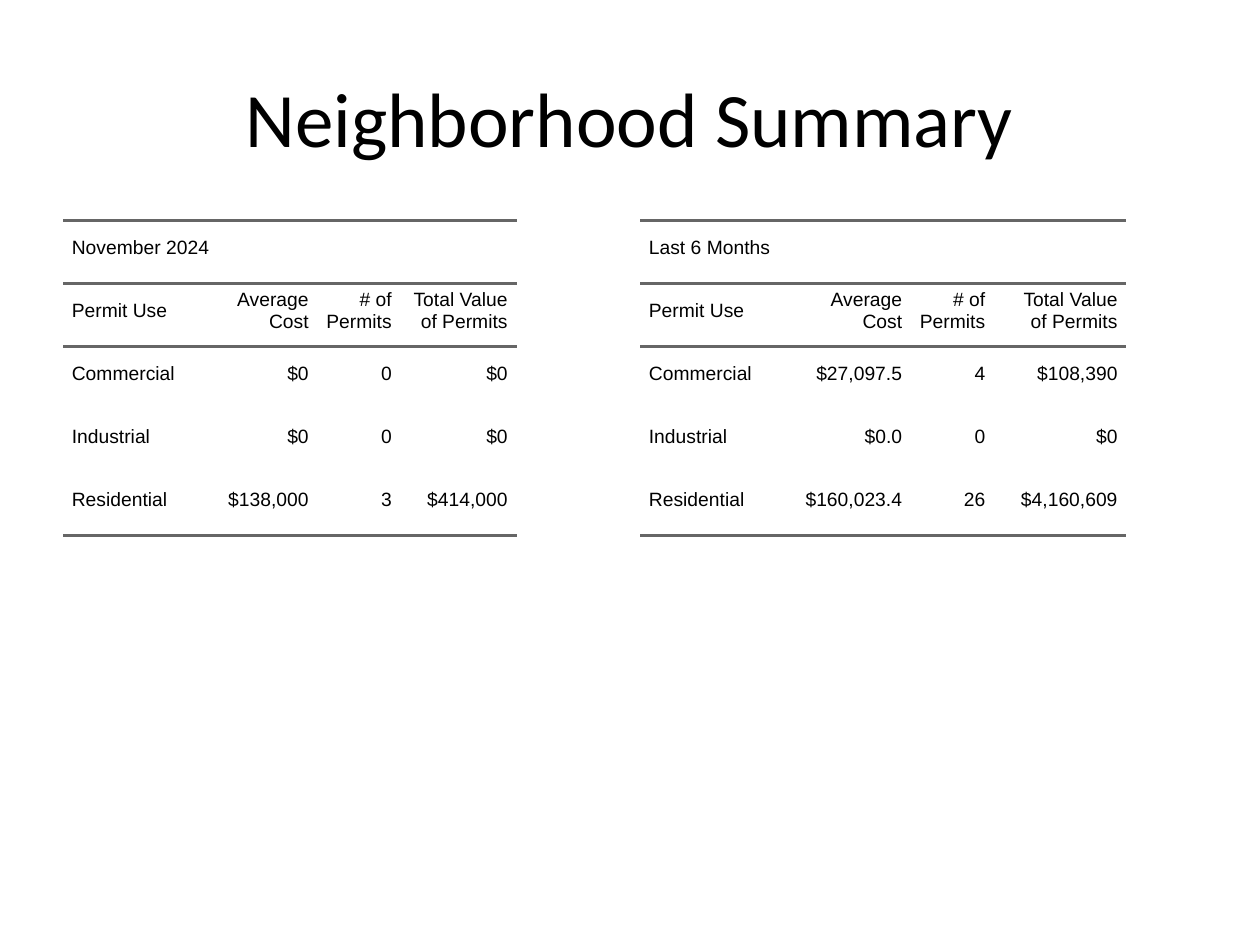
from lxml.etree import SubElement
from pptx import Presentation
from pptx.dml.color import RGBColor
from pptx.enum.text import MSO_ANCHOR, PP_ALIGN
from pptx.oxml.ns import qn
from pptx.util import Inches, Pt

PLAIN_TABLE_STYLE = "{2D5ABB26-0587-4C30-8999-92F81FD0307C}"
HEADINGS = ["Permit Use", "Average Cost", "# of Permits", "Total Value of Permits"]


def colour(value):
    return RGBColor.from_string(value)


class PermitSlide:
    text_colour = "000000"
    rule_colour = "666666"
    rule_width = Pt(1.5)
    row_height = Inches(0.5)
    padding = Inches(0.07)

    def __init__(self, page):
        self.page = page

    def style_paragraph(self, para, font, size, alignment):
        para.alignment = alignment
        para.font.name = font
        para.font.size = Pt(size)
        para.font.color.rgb = colour(self.text_colour)

    def title(self, text):
        box = self.page.shapes.add_textbox(Inches(0.5), Inches(0.3), Inches(9), Inches(1.25))
        frame = box.text_frame
        frame.word_wrap = True
        frame.vertical_anchor = MSO_ANCHOR.MIDDLE
        frame.text = text
        self.style_paragraph(frame.paragraphs[0], "Calibri", 44, PP_ALIGN.CENTER)

    def rule(self, cell, side):
        properties = cell._tc.get_or_add_tcPr()
        line = SubElement(properties, qn(f"a:{side}"), w=str(self.rule_width))
        fill = SubElement(line, qn("a:solidFill"))
        SubElement(fill, qn("a:srgbClr"), val=self.rule_colour)

    def cell(self, cell, text, alignment, sides):
        cell.text = text
        cell.vertical_anchor = MSO_ANCHOR.MIDDLE
        cell.margin_left = cell.margin_top = 0
        cell.margin_right = cell.margin_bottom = self.padding
        para = cell.text_frame.paragraphs[0]
        self.style_paragraph(para, "Arial", 11, alignment)
        para.space_before = para.space_after = Pt(5)
        para._p.get_or_add_pPr().set("marL", str(self.padding))
        for side in sides:
            self.rule(cell, side)
        cell.fill.background()

    def table(self, left, widths, period, permits):
        rows = [[period, "", "", ""], HEADINGS, *permits]
        frame = self.page.shapes.add_table(
            len(rows), len(widths), Inches(left), Inches(1.75),
            Inches(sum(widths)), self.row_height * len(rows),
        )
        table = frame.table
        table.first_row = table.horz_banding = False
        table._tbl.tblPr.find(qn("a:tableStyleId")).text = PLAIN_TABLE_STYLE
        for column, width in zip(table.columns, widths):
            column.width = Inches(width)
        table.cell(0, 0).merge(table.cell(0, len(widths) - 1))
        for row, values in enumerate(rows):
            table.rows[row].height = self.row_height
            sides = ["lnT", "lnB"] if row < 2 else ["lnB"] if row == len(rows) - 1 else []
            for column, text in enumerate(values):
                alignment = PP_ALIGN.RIGHT if column else PP_ALIGN.LEFT
                self.cell(table.cell(row, column), text, alignment, sides)


def main():
    deck = Presentation()
    deck.slide_width = Inches(10)
    deck.slide_height = Inches(7.5)
    slide = PermitSlide(deck.slides.add_slide(deck.slide_layouts[6]))
    slide.table(0.5, [1.1, 0.92, 0.66, 0.92], "November 2024", [
        ["Commercial", "$0", "0", "$0"],
        ["Industrial", "$0", "0", "$0"],
        ["Residential", "$138,000", "3", "$414,000"],
    ])
    slide.table(5.08, [1.1, 1.05, 0.66, 1.05], "Last 6 Months", [
        ["Commercial", "$27,097.5", "4", "$108,390"],
        ["Industrial", "$0.0", "0", "$0"],
        ["Residential", "$160,023.4", "26", "$4,160,609"],
    ])
    slide.title("Neighborhood Summary")
    deck.save("out.pptx")


if __name__ == "__main__":
    main()
